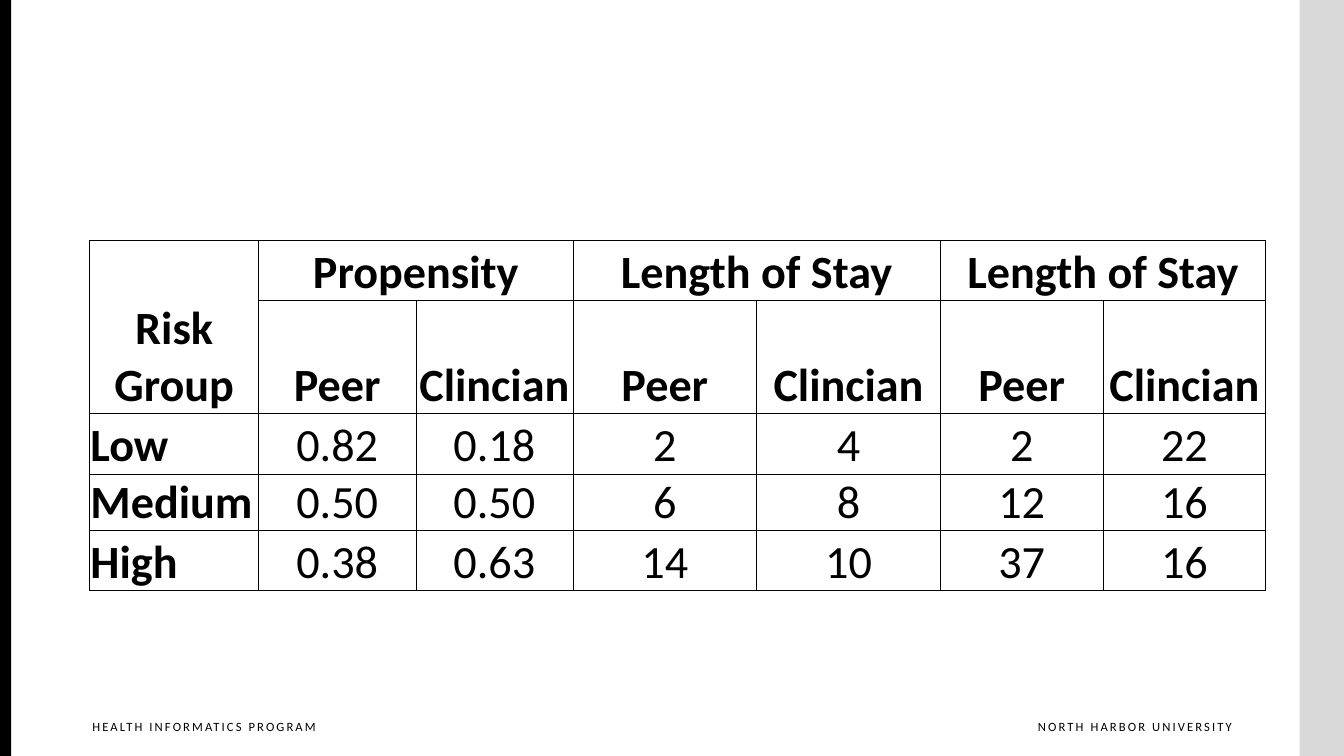
"""Build the slide comparing peer and clinician results by risk group."""
from dataclasses import dataclass
from typing import Any

from lxml.etree import SubElement as Sub
from pptx import Presentation as Deck
from pptx.dml.color import RGBColor as Color
from pptx.enum.shapes import MSO_SHAPE as Shape
from pptx.enum.text import MSO_ANCHOR as Anchor, PP_ALIGN as Align
from pptx.oxml import parse_xml as to_xml
from pptx.oxml.ns import nsdecls, qn
from pptx.util import Cm, Pt

BLACK = Color(0, 0, 0)
WHITE = Color(255, 255, 255)
GREY = Color(0xD9, 0xD9, 0xD9)

WIDTH, HEIGHT = 33.87, 19.05
COLS = [4.26, 3.96, 3.96, 4.63, 4.63, 4.1, 4.1]
ROWS = [1.52, 2.84, 1.52, 1.35, 1.52]
DATA = [
    ["Risk Group", "Propensity", "", "Length of Stay", "", "Length of Stay", ""],
    [""] + ["Peer", "Clincian"] * 3,
    ["Low", "0.82", "0.18", "2", "4", "2", "22"],
    ["Medium", "0.50", "0.50", "6", "8", "12", "16"],
    ["High", "0.38", "0.63", "14", "10", "37", "16"],
]
SPANS = [((0, 0), (1, 0))] + [((0, col), (0, col + 1)) for col in (1, 3, 5)]
CELL = {
    "vertical_anchor": Anchor.BOTTOM,
    "margin_left": Cm(0.02),
    "margin_right": Cm(0.02),
    "margin_top": Cm(0.02),
    "margin_bottom": 0,
}
FRAME = {
    "word_wrap": True,
    "vertical_anchor": Anchor.TOP,
    "margin_left": Cm(0.25),
    "margin_right": 0,
    "margin_top": Cm(0.13),
    "margin_bottom": Cm(0.13),
}


@dataclass
class Bar:
    """A full-height strip at a slide edge."""
    left: float
    width: float
    fill: Color


@dataclass
class Note:
    """A line of text in the footer."""
    text: str
    left: float
    width: float
    align: Align


BARS = [Bar(32.75, 1.12, GREY), Bar(0, 0.28, BLACK)]
NOTES = [
    Note("NORTH HARBOR UNIVERSITY", 25.07, 5.97, Align.RIGHT),
    Note("HEALTH INFORMATICS PROGRAM", 2.08, 6.45, Align.LEFT),
]


def apply(item: Any, form: dict[str, Any]) -> None:
    """Set every format value on the item."""
    for name, value in form.items():
        setattr(item, name, value)


def write(frame: Any, text: str, align: Align, size: float, bold: bool) -> Any:
    """Put one styled run in the frame and return it."""
    par = frame.paragraphs[0]
    par.alignment = align
    run = par.add_run()
    run.text = text
    apply(run.font, {"name": "Calibri", "size": Pt(size), "bold": bold})
    run.font.color.rgb = BLACK
    return run


def draw_bar(slide: Any, bar: Bar) -> None:
    """Draw one edge strip."""
    shape = slide.shapes.add_shape(
        Shape.RECTANGLE, Cm(bar.left), 0, Cm(bar.width), Cm(HEIGHT))
    shape.shadow.inherit = False
    shape.fill.solid()
    shape.fill.fore_color.rgb = bar.fill
    shape.line.fill.background()


def draw_note(slide: Any, note: Note) -> None:
    """Draw one letter-spaced footer line."""
    box = slide.shapes.add_textbox(
        Cm(note.left), Cm(17.98), Cm(note.width), Cm(0.84))
    apply(box.text_frame, FRAME)
    run = write(box.text_frame, note.text, note.align, 9, False)
    run.font._element.set("spc", "150")


def add_edges(cell: Any) -> None:
    """Give the cell a thin black border on each side."""
    props = cell._tc.get_or_add_tcPr()
    for spot, side in enumerate("LRTB"):
        line = to_xml(f'<a:ln{side} {nsdecls("a")} w="6350"/>')
        fill = Sub(line, qn("a:solidFill"))
        Sub(fill, qn("a:srgbClr"), val=str(BLACK))
        props.insert(spot, line)


def draw_table(slide: Any) -> None:
    """Draw the risk group table."""
    table = slide.shapes.add_table(
        len(ROWS), len(COLS), Cm(2.26), Cm(6.06),
        Cm(sum(COLS)), Cm(sum(ROWS))).table
    apply(table, {"first_row": False, "horz_banding": False})
    for col, width in zip(table.columns, COLS):
        col.width = Cm(width)
    for row, height in zip(table.rows, ROWS):
        row.height = Cm(height)
    for start, end in SPANS:
        table.cell(*start).merge(table.cell(*end))
    for i, row in enumerate(DATA):
        for j, text in enumerate(row):
            cell = table.cell(i, j)
            apply(cell, CELL)
            cell.fill.solid()
            cell.fill.fore_color.rgb = WHITE
            add_edges(cell)
            head = i < 2
            align = Align.LEFT if j == 0 and not head else Align.CENTER
            if text:
                write(cell.text_frame, text, align, 33, head or j == 0)


def main() -> None:
    """Build and save the deck."""
    deck = Deck()
    apply(deck, {"slide_width": Cm(WIDTH), "slide_height": Cm(HEIGHT)})
    slide = deck.slides.add_slide(deck.slide_layouts[6])
    for bar in BARS:
        draw_bar(slide, bar)
    for note in NOTES:
        draw_note(slide, note)
    draw_table(slide)
    deck.save("out.pptx")


if __name__ == "__main__":
    main()
